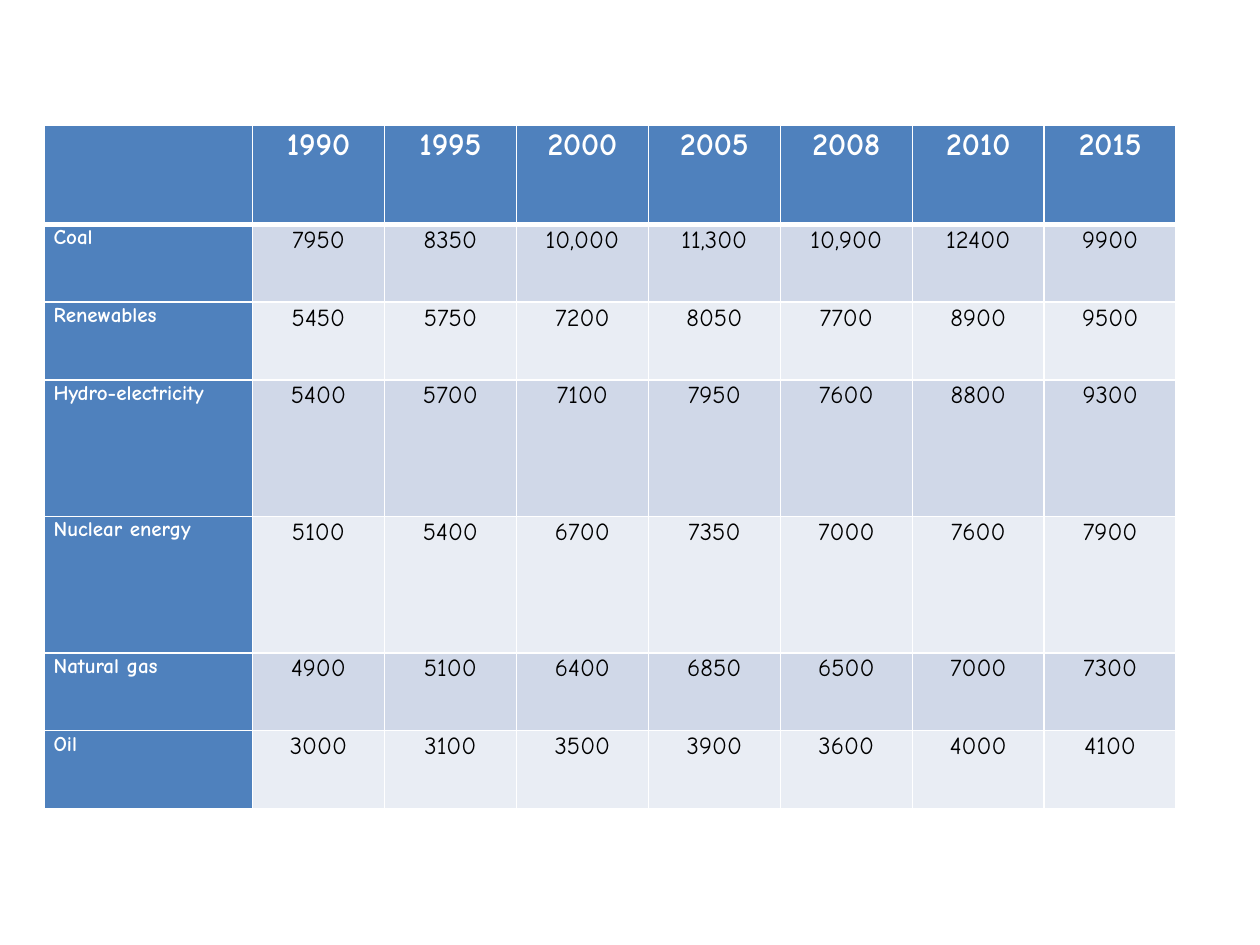
from lxml import etree
from pptx import Presentation
from pptx import util as u
from pptx.dml import color
from pptx.enum import text
from pptx.oxml import ns

WHITE, BLACK, BLUE = "FFFFFF", "000000", "4F81BD"
BANDS = ["D0D8E8", "E9EDF4"]
YEARS = ["", "1990", "1995", "2000", "2005", "2008", "2010", "2015"]
SOURCES = [
    ["Coal", "7950", "8350", "10,000", "11,300", "10,900", "12400", "9900"],
    ["Renewables", "5450", "5750", "7200", "8050", "7700", "8900", "9500"],
    ["Hydro-electricity", "5400", "5700", "7100", "7950", "7600", "8800", "9300"],
    ["Nuclear energy", "5100", "5400", "6700", "7350", "7000", "7600", "7900"],
    ["Natural gas", "4900", "5100", "6400", "6850", "6500", "7000", "7300"],
    ["Oil", "3000", "3100", "3500", "3900", "3600", "4000", "4100"],
]
WIDTHS = [4.19] + [2.66] * 7
HEIGHTS = [2, 1.57, 1.57, 2.75, 2.75, 1.57, 1.57]


def rgb(code):
    return color.RGBColor.from_string(code)


class Deck:
    font = "Comic Neue"
    inset = u.Cm(0.18)
    space = 1.07

    def __init__(self, prs):
        self.slide = prs.slides.add_slide(prs.slide_layouts[6])

    def edge(self, cell, side, width):
        """Draw one white border; call before the cell is filled."""
        props = cell._tc.get_or_add_tcPr()
        line = etree.SubElement(props, ns.qn("a:ln" + side), w=str(u.Pt(width)))
        fill = etree.SubElement(line, ns.qn("a:solidFill"))
        etree.SubElement(fill, ns.qn("a:srgbClr"), val=WHITE)

    def cell(self, cell, words, size, ink, fill, bold, align):
        cell.margin_left = cell.margin_right = self.inset
        cell.margin_top = cell.margin_bottom = 0
        cell.fill.solid()
        cell.fill.fore_color.rgb = rgb(fill)
        para = cell.text_frame.paragraphs[0]
        para.alignment = align
        para.line_spacing = self.space
        if words:
            run = para.add_run()
            run.text = words
            run.font.name = self.font
            run.font.size = u.Pt(size)
            run.font.bold = bold
            run.font.color.rgb = rgb(ink)

    def table(self, left, top, widths, heights, rows):
        frame = self.slide.shapes.add_table(
            len(rows), len(widths), u.Cm(left), u.Cm(top),
            u.Cm(sum(widths)), u.Cm(sum(heights)))
        grid = frame.table
        for col, width in zip(grid.columns, widths):
            col.width = u.Cm(width)
        for row, height in zip(grid.rows, heights):
            row.height = u.Cm(height)
        left, center = text.PP_ALIGN.LEFT, text.PP_ALIGN.CENTER
        for r, row in enumerate(rows):
            for c, words in enumerate(row):
                cell = grid.cell(r, c)
                for side in "LRTB":
                    rule = (r, side) in [(0, "B"), (1, "T")]
                    self.edge(cell, side, 3 if rule else 1)
                if r == 0:
                    self.cell(cell, words, 18, WHITE, BLUE, True, center)
                elif c == 0:
                    self.cell(cell, words, 12, WHITE, BLUE, True, left)
                else:
                    band = BANDS[(r - 1) % 2]
                    self.cell(cell, words, 14, BLACK, band, False, center)


def main():
    prs = Presentation()
    prs.slide_width, prs.slide_height = u.Cm(25.4), u.Cm(19.05)
    deck = Deck(prs)
    deck.table(0.9, 2.52, WIDTHS, HEIGHTS, [YEARS] + SOURCES)
    prs.save("out.pptx")


if __name__ == "__main__":
    main()
